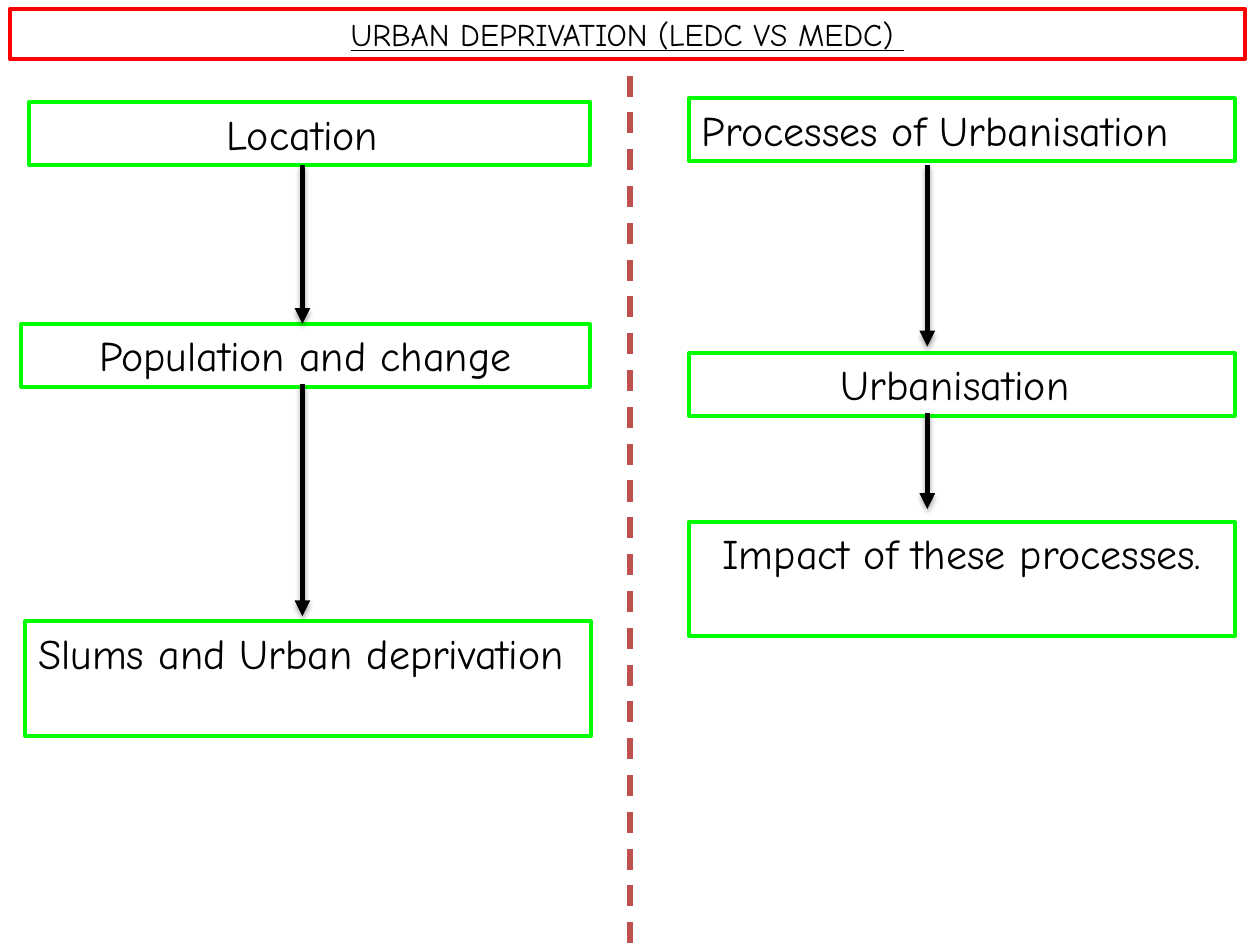
import dataclasses

import lxml.etree
import pptx
import pptx.dml.color
import pptx.enum.dml
import pptx.enum.shapes
import pptx.enum.text
import pptx.oxml.ns
import pptx.util

# The slide is a grid of 100 columns by 75 rows, each cell a tenth of an inch.
CELL = pptx.util.Inches(0.1)
COLS, ROWS = 100, 75
FONT = "Comic Neue"
GREEN, RED, BLACK, BRICK = "00FF00", "FF0000", "000000", "C0504D"
LEFT = pptx.enum.text.PP_ALIGN.LEFT
CENTER = pptx.enum.text.PP_ALIGN.CENTER


@dataclasses.dataclass
class Box:
    text: str
    col: float
    row: float
    wide: float
    high: float = 5
    edge: str = GREEN
    size: int = 24
    align: pptx.enum.text.PP_ALIGN = CENTER
    under: bool = False


@dataclasses.dataclass
class Arrow:
    col: float
    top: float
    end: float


RIGHT_COL, RIGHT_WIDE = 54.7, 43.3
LEFT_STEM, RIGHT_STEM = 24, 73.6

BOXES = [
    Box("URBAN DEPRIVATION (LEDC VS MEDC) ", 0.8, 0.7, 98, 4,
        edge=RED, size=18, under=True),
    Box("Location ", 2.3, 8.1, 44.5),
    Box("Population and change", 1.7, 25.7, 45.1),
    Box("Slums and Urban deprivation ", 2, 49.3, 44.9, 9.1),
    Box("Processes of Urbanisation", RIGHT_COL, 7.8, RIGHT_WIDE, align=LEFT),
    Box("Urbanisation ", RIGHT_COL, 28, RIGHT_WIDE),
    Box("Impact of these processes.", RIGHT_COL, 41.4, RIGHT_WIDE, 9.1),
]

ARROWS = [
    Arrow(LEFT_STEM, 13.1, 25.7),
    Arrow(LEFT_STEM, 30.5, 48.9),
    Arrow(RIGHT_STEM, 13.1, 27.5),
    Arrow(RIGHT_STEM, 32.8, 40.4),
]


def cells(count: float) -> int:
    return round(count * CELL)


def paint(code: str) -> pptx.dml.color.RGBColor:
    return pptx.dml.color.RGBColor.from_string(code)


def node(parent, tag: str, **attrs: str):
    """Add a DrawingML child to an XML element."""
    return lxml.etree.SubElement(parent, pptx.oxml.ns.qn(tag), attrs)


def write(frame, text: str, *, size: int, align, under: bool) -> None:
    frame.word_wrap = True
    para = frame.paragraphs[0]
    para.alignment = align
    run = para.add_run()
    run.text = text
    run.font.name = FONT
    run.font.size = pptx.util.Pt(size)
    run.font.color.rgb = paint(BLACK)
    if under:
        run.font.underline = True


def draw_box(slide, box: Box) -> None:
    shape = slide.shapes.add_textbox(
        *map(cells, (box.col, box.row, box.wide, box.high)))
    shape.line.color.rgb = paint(box.edge)
    shape.line.width = pptx.util.Pt(2.25)
    write(shape.text_frame, box.text, size=box.size, align=box.align,
          under=box.under)


def draw_line(slide, col: float, top: float, end: float, color: str):
    """Draw a vertical line and return it with its empty effect list."""
    line = slide.shapes.add_connector(
        pptx.enum.shapes.MSO_CONNECTOR.STRAIGHT,
        *map(cells, (col, top, col, end)))
    line.line.color.rgb = paint(color)
    line.line.width = pptx.util.Pt(3)
    return line, node(line._element.spPr, "a:effectLst")


def draw_arrow(slide, arrow: Arrow) -> None:
    line, effects = draw_line(slide, arrow.col, arrow.top, arrow.end, BLACK)
    node(line.line._get_or_add_ln(), "a:tailEnd", type="triangle")
    shade = node(effects, "a:outerShdw", blurRad=str(pptx.util.Pt(3.1)),
                 dist=str(pptx.util.Pt(1.8)), dir="5400000", rotWithShape="0")
    tint = node(shade, "a:srgbClr", val=BLACK)
    node(tint, "a:alpha", val="35000")


def main() -> None:
    deck = pptx.Presentation()
    deck.slide_width, deck.slide_height = cells(COLS), cells(ROWS)
    slide = deck.slides.add_slide(deck.slide_layouts[6])
    for box in BOXES:
        draw_box(slide, box)
    for arrow in ARROWS:
        draw_arrow(slide, arrow)
    split, _ = draw_line(slide, COLS / 2, 6, ROWS, BRICK)
    split.line.dash_style = pptx.enum.dml.MSO_LINE.DASH
    deck.save("out.pptx")


if __name__ == "__main__":
    main()
